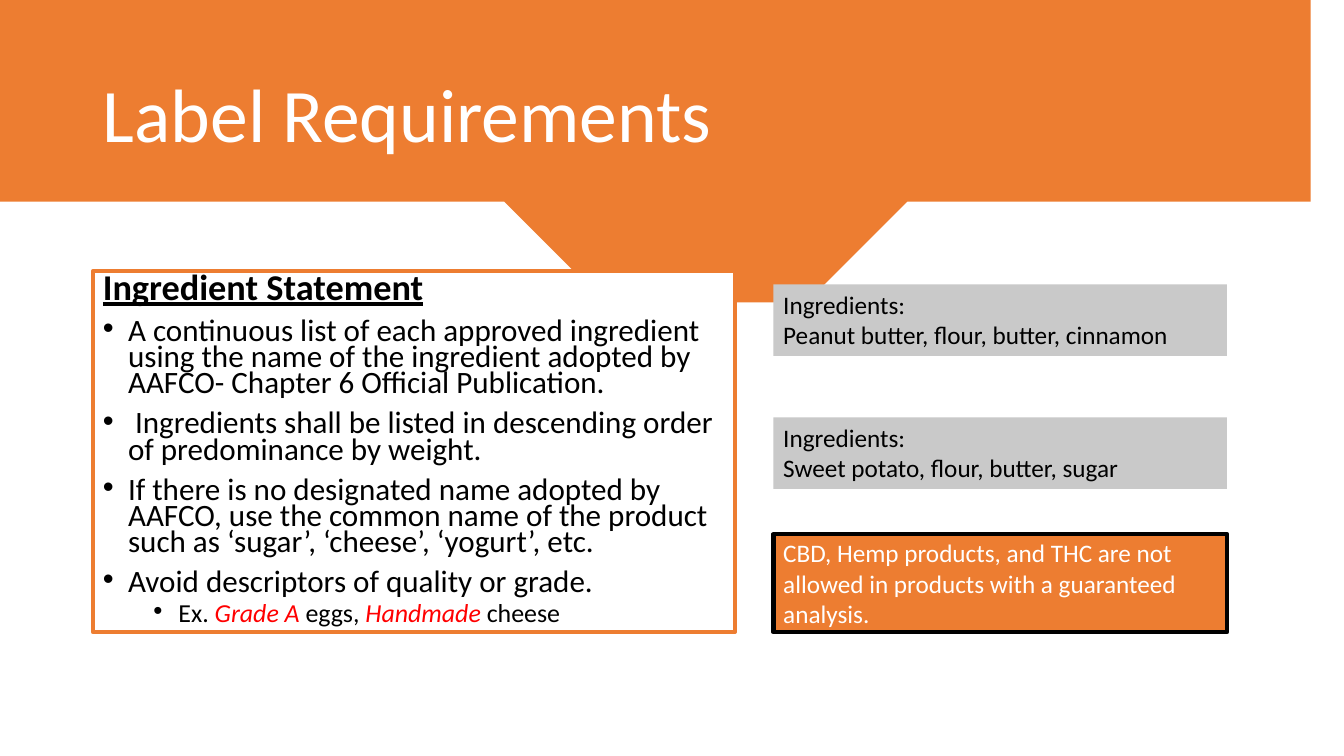
from dataclasses import dataclass

import lxml.etree
import pptx
import pptx.dml.color
import pptx.enum.shapes
import pptx.enum.text
import pptx.oxml.ns
import pptx.util
from pptx.util import Inches

FONT = "Calibri"
ORANGE, GREY = "ED7D31", "C9C9C9"
BLACK, WHITE, RED = "000000", "FFFFFF", "FF0000"
ANCHOR = pptx.enum.text.MSO_ANCHOR

# Banner outline: right edge, lower sweep to the left, then back along the white gap
BANNER_POINTS = [
    (0, 0), (13.33, 0), (13.33, 1.9), (13.09, 1.95), (12.47, 2.06), (11.84, 2.17),
    (11.75, 2.18), (11.86, 2.17), (12.66, 2.1), (13.33, 2.02), (13.33, 2.09),
    (12.66, 2.16), (11.62, 2.25), (10.72, 2.32), (10.11, 2.38), (9.55, 2.43),
    (8.82, 2.48), (8.37, 2.51), (7.76, 2.53), (7.14, 2.54), (6.76, 2.57),
    (6.54, 2.56), (5.87, 2.55), (4.8, 2.5), (4.2, 2.47), (3.75, 2.44),
    (3.36, 2.41), (2.76, 2.35), (2.25, 2.3), (1.78, 2.25), (1.36, 2.19),
    (0.89, 2.13), (0.38, 2.05), (0, 1.98), (0, 1.92), (0.54, 2.02),
    (1.04, 2.09), (1.47, 2.15), (1.86, 2.2), (2.26, 2.25), (2.82, 2.3),
    (3.26, 2.34), (3.76, 2.38), (4.24, 2.41), (4.54, 2.43), (5.04, 2.45),
    (4.57, 2.42), (4.03, 2.38), (3.56, 2.34), (3.07, 2.29), (2.56, 2.24),
    (1.92, 2.17), (1.58, 2.13), (1.11, 2.06), (0.65, 1.99), (0.22, 1.92), (0, 1.88),
]


@dataclass
class Item:
    spans: list[str]
    size: float
    bullet: bool = True
    level: int = 0


@dataclass
class Panel:
    top: float
    height: float
    lines: str
    fill: str
    text: str
    border: str = ""
    anchor: ANCHOR = ANCHOR.TOP


ITEMS = [
    Item(["Ingredient Statement"], 25.9, bullet=False),
    Item(["A continuous list of each approved ingredient using the name of the "
          "ingredient adopted by AAFCO- Chapter 6 Official Publication."], 22.2),
    Item([" Ingredients shall be listed in descending order of predominance by weight."], 22.2),
    Item(["If there is no designated name adopted by AAFCO, use the common name of "
          "the product such as ‘sugar’, ‘cheese’, ‘yogurt’, etc."], 22.2),
    Item(["Avoid descriptors of quality or grade."], 22.2),
    # Every second span is a discouraged descriptor
    Item(["Ex. ", "Grade A ", "eggs, ", "Handmade ", "cheese"], 18.5, level=1),
]

PANELS = [
    Panel(2.82, 0.71, "Ingredients:\nPeanut butter, flour, butter, cinnamon", GREY, BLACK),
    Panel(4.14, 0.71, "Ingredients:\nSweet potato, flour, butter, sugar", GREY, BLACK),
    Panel(5.3, 0.97, "CBD, Hemp products, and THC are not allowed in products "
          "with a guaranteed analysis.", ORANGE, WHITE, BLACK, ANCHOR.MIDDLE),
]


def colour(hex_value: str) -> pptx.dml.color.RGBColor:
    return pptx.dml.color.RGBColor.from_string(hex_value)


def place(shape, left: float, top: float, width: float, height: float) -> None:
    shape.left, shape.top = Inches(left), Inches(top)
    shape.width, shape.height = Inches(width), Inches(height)


def paint(shape, fill: str, border: str = "", width: float = 0) -> None:
    shape.fill.solid()
    shape.fill.fore_color.rgb = colour(fill)
    if border:
        shape.line.color.rgb = colour(border)
        shape.line.width = pptx.util.Pt(width)
    else:
        shape.line.fill.background()


def style(span, size: float, hex_value: str) -> None:
    span.font.name = FONT
    span.font.size = pptx.util.Pt(size)
    span.font.color.rgb = colour(hex_value)


def set_bullet(para, item: Item) -> None:
    properties = para._p.get_or_add_pPr()
    margin = 0.25 + 0.5 * item.level if item.bullet else 0
    properties.set("marL", str(Inches(margin)))
    properties.set("indent", str(Inches(-0.25 if item.bullet else 0)))
    name = pptx.oxml.ns.qn
    if item.bullet:
        lxml.etree.SubElement(properties, name("a:buFont"), typeface="Arial")
        lxml.etree.SubElement(properties, name("a:buChar"), char="•")
    else:
        lxml.etree.SubElement(properties, name("a:buNone"))


def add_banner(page) -> None:
    builder = page.shapes.build_freeform(0, 0, scale=Inches(1))
    builder.add_line_segments(BANNER_POINTS[1:], close=True)
    banner = builder.convert_to_shape()
    banner.shadow.inherit = False
    paint(banner, ORANGE)
    # Keep the banner behind the placeholders
    page.shapes._spTree.insert(2, banner._element)


def fill_title(title) -> None:
    place(title, 0.92, 0.44, 11.5, 1.47)
    frame = title.text_frame
    frame.text = "Label Requirements"
    frame.auto_size = pptx.enum.text.MSO_AUTO_SIZE.NONE
    frame.vertical_anchor = ANCHOR.MIDDLE
    para = frame.paragraphs[0]
    para.alignment = pptx.enum.text.PP_ALIGN.LEFT
    para.line_spacing = 0.9
    style(para.runs[0], 54, WHITE)


def fill_body(body) -> None:
    place(body, 0.92, 2.69, 6.37, 3.58)
    paint(body, WHITE, ORANGE, 3)
    frame = body.text_frame
    frame.auto_size = pptx.enum.text.MSO_AUTO_SIZE.NONE
    frame.vertical_anchor = ANCHOR.TOP
    for index, item in enumerate(ITEMS):
        para = frame.add_paragraph() if index else frame.paragraphs[0]
        para.level = item.level
        para.line_spacing = 0.7
        para.space_before = pptx.util.Pt((5 if item.level else 10) if index else 0)
        set_bullet(para, item)
        for number, words in enumerate(item.spans):
            span = para.add_run()
            span.text = words
            discouraged = number % 2 == 1
            style(span, item.size, RED if discouraged else BLACK)
            span.font.italic = discouraged
            span.font.bold = span.font.underline = not item.bullet


def add_panel(page, panel: Panel) -> None:
    box = page.shapes.add_shape(
        pptx.enum.shapes.MSO_SHAPE.RECTANGLE,
        Inches(7.67), Inches(panel.top), Inches(4.5), Inches(panel.height))
    box.shadow.inherit = False
    paint(box, panel.fill, panel.border, 3.25)
    frame = box.text_frame
    frame.word_wrap = True
    frame.vertical_anchor = panel.anchor
    frame.text = panel.lines
    for para in frame.paragraphs:
        para.alignment = pptx.enum.text.PP_ALIGN.LEFT
        for span in para.runs:
            style(span, 18, panel.text)


def main() -> None:
    deck = pptx.Presentation()
    deck.slide_width, deck.slide_height = Inches(13.33), Inches(7.5)
    page = deck.slides.add_slide(deck.slide_layouts[1])
    add_banner(page)
    fill_title(page.shapes.title)
    fill_body(page.placeholders[1])
    for panel in PANELS:
        add_panel(page, panel)
    deck.save("out.pptx")


if __name__ == "__main__":
    main()
